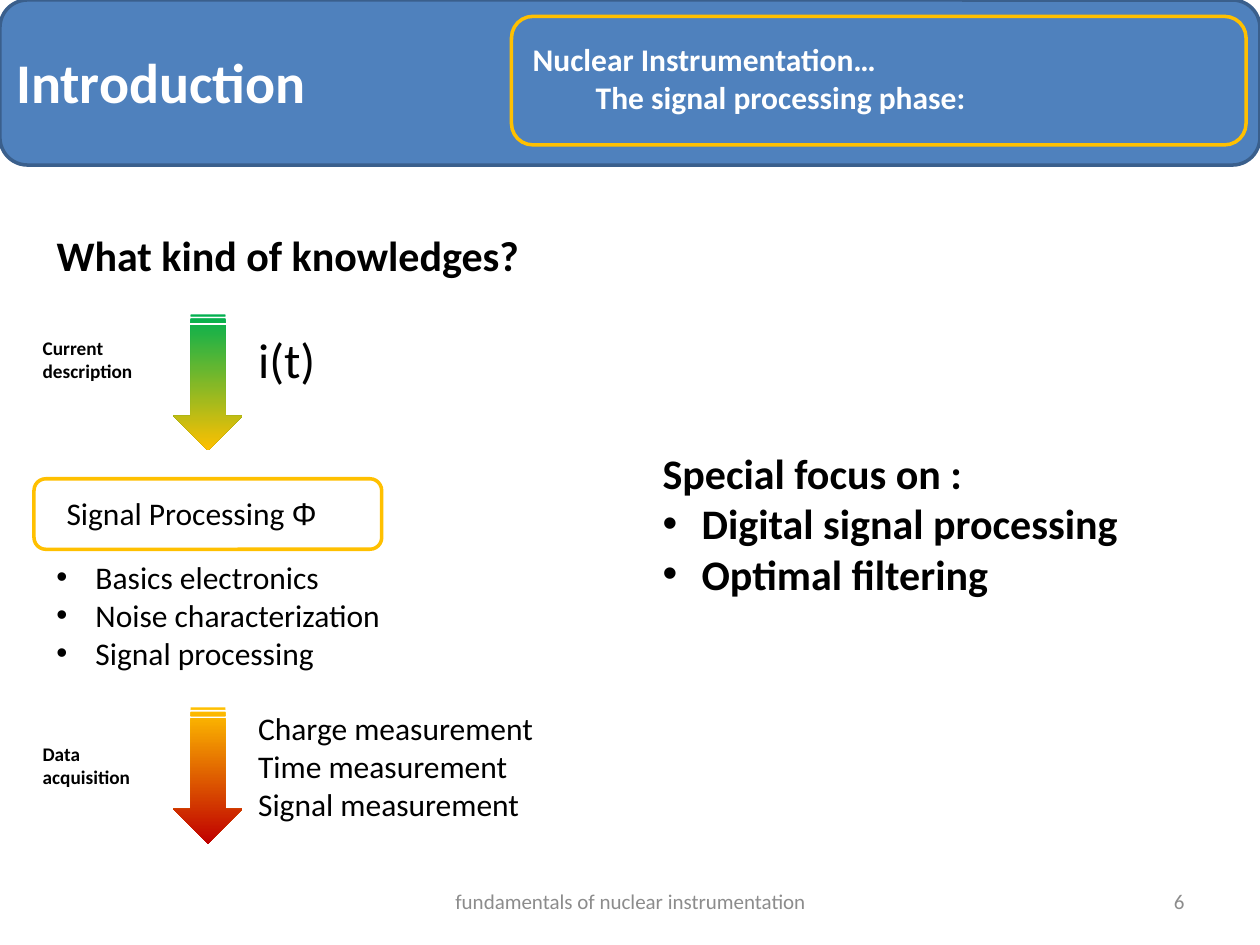
from dataclasses import dataclass
from lxml.etree import SubElement
from pptx import Presentation
from pptx.dml.color import RGBColor
from pptx.enum.shapes import MSO_SHAPE
from pptx.enum.text import MSO_ANCHOR, MSO_AUTO_SIZE, PP_ALIGN
from pptx.oxml.ns import qn
from pptx.slide import Slide
from pptx.util import Pt

EMU_PER_PX = 9144
BLACK = RGBColor(0x00, 0x00, 0x00)
WHITE = RGBColor(0xFF, 0xFF, 0xFF)
GREY = RGBColor(0x8C, 0x8C, 0x8C)
BLUE = RGBColor(0x4F, 0x81, 0xBD)
DARK_BLUE = RGBColor(0x3A, 0x5F, 0x8C)
GREEN = RGBColor(0x00, 0xB0, 0x50)
AMBER = RGBColor(0xFF, 0xC0, 0x00)
RED = RGBColor(0xC0, 0x00, 0x00)


def px(*lengths):
    return [length * EMU_PER_PX for length in lengths]


@dataclass
class SlideBuilder:
    """Draws styled elements on the current slide."""
    page: Slide
    font: str = "Calibri"
    symbol_font: str = "Arial"
    line_width: int = 2
    indent: int = 31

    def add_span(self, para, text, size, color, bold, font):
        span = para.add_run()
        span.text = text
        span.font.name = font
        span.font.size = Pt(size)
        span.font.bold = bold
        span.font.color.rgb = color

    def add_bullet(self, para):
        properties = para._p.get_or_add_pPr()
        [indent] = px(self.indent)
        properties.set("marL", str(indent))
        properties.set("indent", str(-indent))
        SubElement(properties, qn("a:buFont"), typeface=self.symbol_font)
        SubElement(properties, qn("a:buChar"), char="•")

    def text(self, text, *place, size=18, color=BLACK, bold=False, align=PP_ALIGN.LEFT,
             bullets_from=None, symbol="", fixed=False):
        frame = self.page.shapes.add_textbox(*px(*place)).text_frame
        frame.word_wrap = fixed
        if fixed:
            frame.vertical_anchor = MSO_ANCHOR.MIDDLE
        else:
            frame.auto_size = MSO_AUTO_SIZE.SHAPE_TO_FIT_TEXT
        for index, line in enumerate(text.split("\n")):
            para = frame.add_paragraph() if index else frame.paragraphs[0]
            para.alignment = align
            if bullets_from is not None and index >= bullets_from:
                self.add_bullet(para)
            self.add_span(para, line, size, color, bold, self.font)
        if symbol:
            self.add_span(para, symbol, size, color, bold, self.symbol_font)

    def panel(self, *place, line, fill=None):
        box = self.page.shapes.add_shape(MSO_SHAPE.ROUNDED_RECTANGLE, *px(*place))
        box.shadow.inherit = False
        if fill is None:
            box.fill.background()
        else:
            box.fill.solid()
            box.fill.fore_color.rgb = fill
        box.line.color.rgb = line
        box.line.width = Pt(self.line_width)

    def down_arrow(self, *place, start, end):
        arrow = self.page.shapes.add_shape(MSO_SHAPE.STRIPED_RIGHT_ARROW, *px(*place))
        arrow.rotation = 90
        arrow.shadow.inherit = False
        arrow.line.fill.background()
        arrow.fill.gradient()
        arrow.fill.gradient_angle = 0
        for stop, color, position in zip(arrow.fill.gradient_stops, (start, end), (0, 1)):
            stop.color.rgb = color
            stop.position = position


def main():
    deck = Presentation()
    deck.slide_width, deck.slide_height = px(1000, 750)
    slide = SlideBuilder(deck.slides.add_slide(deck.slide_layouts[6]))

    slide.panel(0, 0, 1000, 131, line=DARK_BLUE, fill=BLUE)
    slide.text("Introduction", 3, 33, 253, 64, size=32, color=WHITE, bold=True)
    slide.panel(406, 13, 583, 102, line=AMBER, fill=BLUE)
    slide.text("Nuclear Instrumentation…\n\tThe signal processing phase:",
               413, 27, 417, 71, color=WHITE, bold=True)

    slide.text("What kind of knowledges?", 35, 177, 391, 50, size=24, bold=True)
    slide.text("Current\ndescription", 24, 262, 92, 47, size=11, bold=True)
    slide.down_arrow(111, 276, 108, 55, start=GREEN, end=AMBER)
    slide.text("i(t)", 195, 257, 66, 57, size=28)

    slide.panel(27, 380, 276, 56, line=AMBER)
    slide.text("Signal Processing ", 43, 387, 220, 40, symbol="Φ")
    slide.text("Basics electronics\nNoise characterization\nSignal processing",
               35, 438, 280, 101, bullets_from=0)

    slide.text("Data\nacquisition", 24, 584, 90, 47, size=11, bold=True)
    slide.down_arrow(111, 588, 108, 55, start=AMBER, end=RED)
    slide.text("Charge measurement\nTime measurement\nSignal measurement", 195, 558, 241, 101)

    slide.text("Special focus on :\nDigital signal processing\nOptimal filtering",
               516, 350, 385, 131, size=24, bold=True, bullets_from=1)

    slide.text("fundamentals of nuclear instrumentation", 342, 695, 317, 40,
               size=12, color=GREY, align=PP_ALIGN.CENTER, fixed=True)
    slide.text("6", 717, 695, 233, 40, size=12, color=GREY, align=PP_ALIGN.RIGHT, fixed=True)

    deck.save("out.pptx")


if __name__ == "__main__":
    main()
